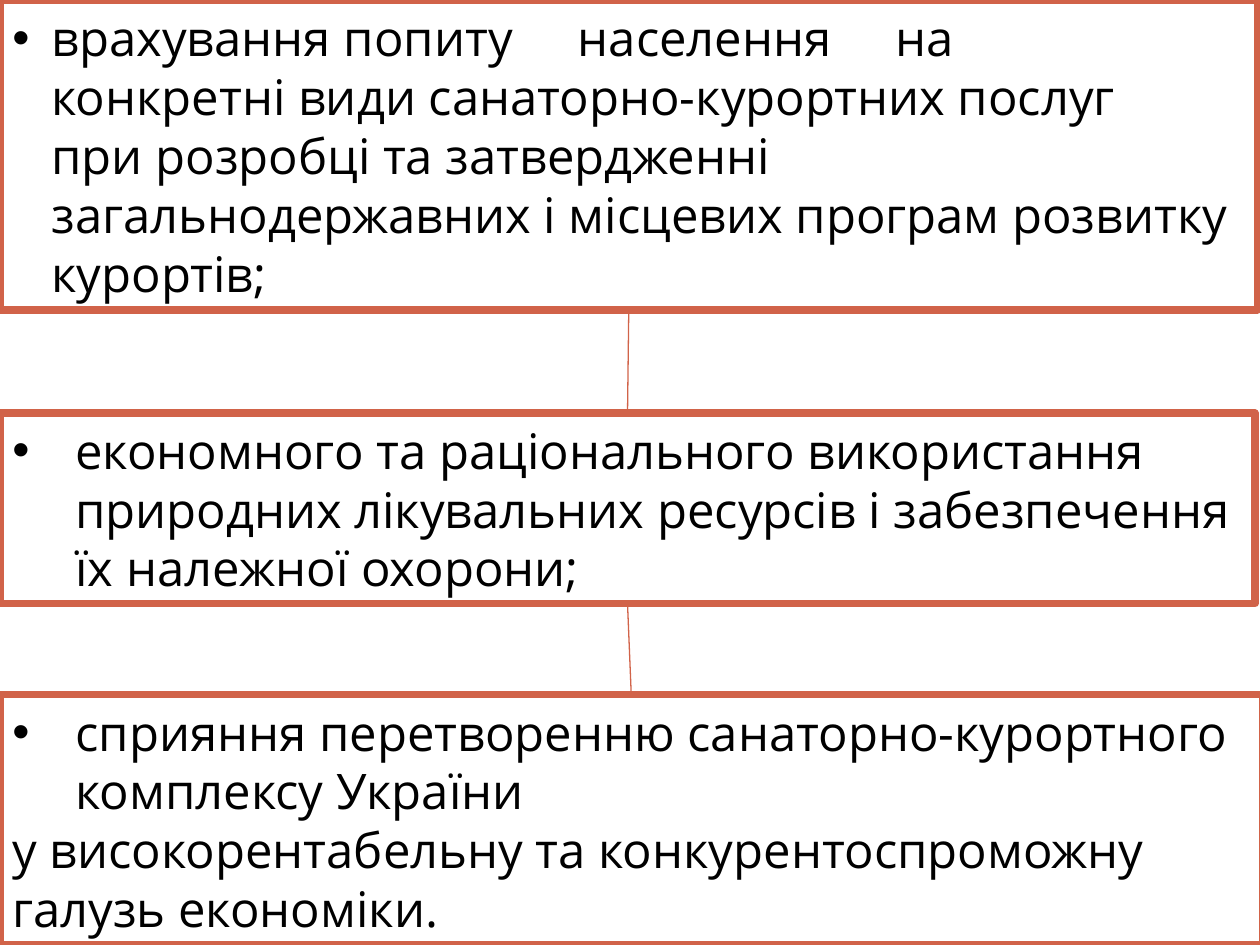
from pptx import Presentation
from pptx.dml.color import RGBColor as RGB
from pptx.enum.shapes import MSO_CONNECTOR as LINK, MSO_SHAPE as SHAPE
from pptx.enum.text import MSO_ANCHOR as ANCHOR, PP_ALIGN as ALIGN
from pptx.oxml.ns import qn
from pptx.util import Cm, Pt
from lxml.etree import SubElement as Sub

COLORS = {"ink": "000000", "paper": "FFFFFF", "edge": "D16349"}
FONT = "Open Sans"

# top, width, height in cm, then paragraphs as (text, format)
BOXES = [
    (0, 25.35, 6.25, [
        ("врахування попиту\tнаселення\tна\vконкретні види "
         "санаторно-курортних послуг\vпри розробці та затвердженні "
         "загальнодержавних і місцевих програм розвитку курортів;",
         {"indent": 0.79, "tabs": (11.4, 17.8)})]),
    (8.33, 25.3, 3.84, [
        ("економного та раціонального використання природних "
         "лікувальних ресурсів і забезпечення їх належної охорони;",
         {"indent": 1.27})]),
    (14, 25.45, 5.05, [
        ("сприяння перетворенню санаторно-курортного комплексу України",
         {"indent": 1.27}),
        ("у високорентабельну та конкурентоспроможну галузь економіки.",
         {})]),
]


def color(name):
    return RGB.from_string(COLORS[name])


def write(para, text, indent=0, tabs=(), size=28, ink="ink"):
    """Fill a paragraph; an indent gives it a hanging bullet."""
    para.text = text
    para.alignment = ALIGN.LEFT
    props = para._p.get_or_add_pPr()
    if indent:
        props.set("marL", str(Cm(indent)))
        props.set("indent", str(-Cm(indent)))
        Sub(props, qn("a:buFont"), typeface="Arial")
        Sub(props, qn("a:buChar"), char="•")
    if tabs:
        stops = Sub(props, qn("a:tabLst"))
        for stop in tabs:
            Sub(stops, qn("a:tab"), pos=str(Cm(stop)), algn="l")
    for run in para.runs:
        run.font.name = FONT
        run.font.size = Pt(size)
        run.font.color.rgb = color(ink)


def add_box(slide, top, width, height, paras):
    box = slide.shapes.add_shape(
        SHAPE.RECTANGLE, 0, Cm(top), Cm(width), Cm(height))
    box.shadow.inherit = False
    box.fill.solid()
    box.fill.fore_color.rgb = color("paper")
    box.line.color.rgb = color("edge")
    box.line.width = Pt(4.33)
    frame = box.text_frame
    frame.word_wrap = True
    frame.vertical_anchor = ANCHOR.MIDDLE
    for i, (text, style) in enumerate(paras):
        para = frame.add_paragraph() if i else frame.paragraphs[0]
        write(para, text, **style)
    return box


def link(slide, upper, lower):
    line = slide.shapes.add_connector(LINK.STRAIGHT, 0, 0, 0, 0)
    line.begin_connect(upper, 2)
    line.end_connect(lower, 0)
    line.line.color.rgb = color("edge")
    line.line.width = Pt(0.75)
    Sub(line._element.spPr, qn("a:effectLst"))


def main():
    deck = Presentation()
    deck.slide_width, deck.slide_height = Cm(25.4), Cm(19.05)
    slide = deck.slides.add_slide(deck.slide_layouts[6])
    boxes = [add_box(slide, *spec) for spec in BOXES]
    for upper, lower in zip(boxes, boxes[1:]):
        link(slide, upper, lower)
    deck.save("out.pptx")


if __name__ == "__main__":
    main()
